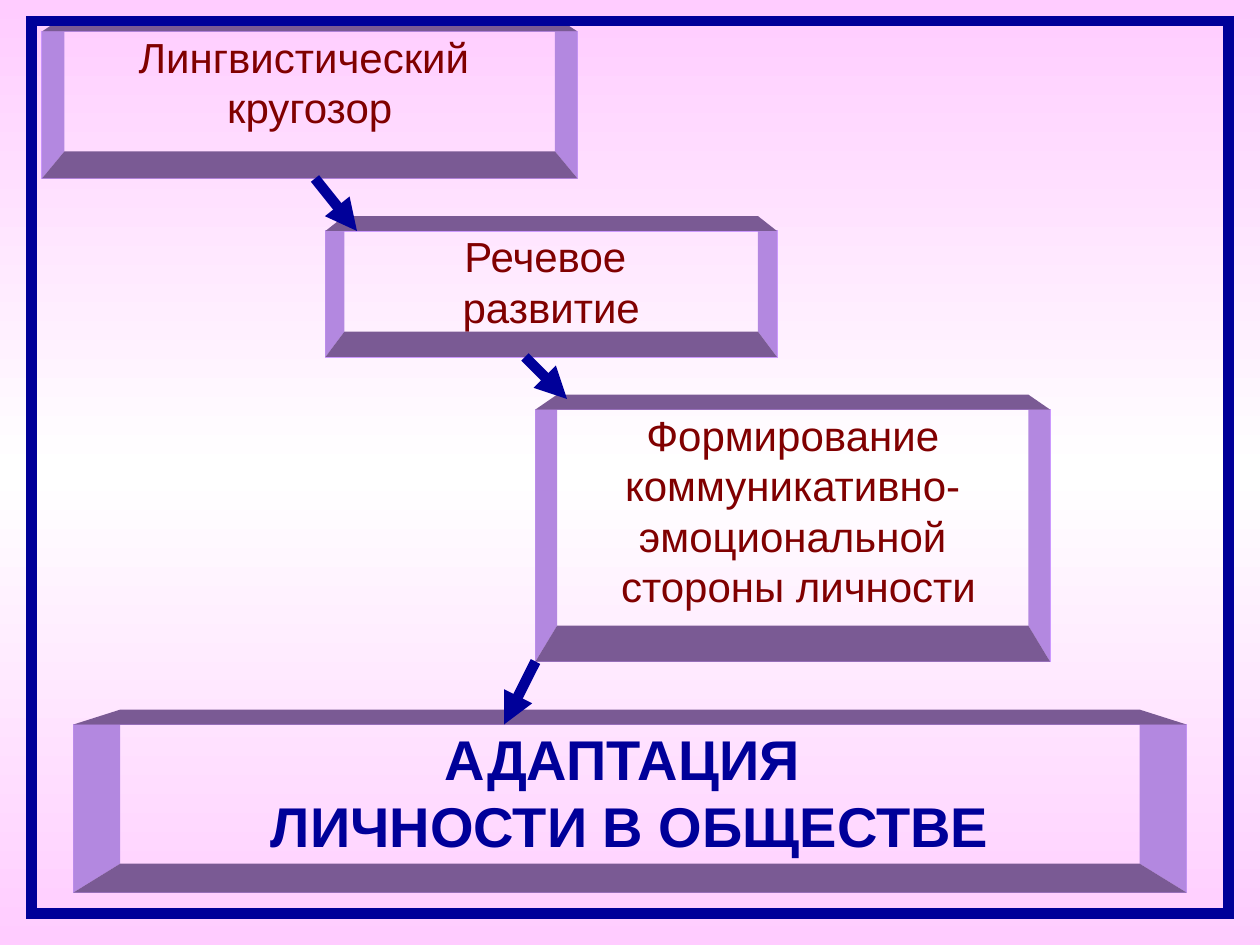
from copy import deepcopy

from lxml import etree
from pptx import Presentation
from pptx.dml.color import RGBColor
from pptx.enum.shapes import MSO_CONNECTOR, MSO_SHAPE
from pptx.enum.text import MSO_ANCHOR, PP_ALIGN
from pptx.oxml.ns import qn
from pptx.util import Pt

RECT = MSO_SHAPE.RECTANGLE
STRAIGHT = MSO_CONNECTOR.STRAIGHT
TOP = MSO_ANCHOR.TOP
CENTER = PP_ALIGN.CENTER

COLORS = {name: RGBColor.from_string(value) for name, value in {
    "pink": "FFCCFF", "white": "FFFFFF", "navy": "000099", "maroon": "800000",
    "edge": "CC99FF", "side": "B388E0", "shade": "7A5A94",
}.items()}

TEXT_FRAME = {"word_wrap": False, "vertical_anchor": TOP,
              "margin_left": Pt(7.2), "margin_right": Pt(7.2),
              "margin_top": Pt(0), "margin_bottom": Pt(3.6)}
STEP_FONT = {"name": "Arial", "size": Pt(24), "bold": False}
RESULT_FONT = {"name": "Arial", "size": Pt(32), "bold": True}

prs = Presentation()
prs.slide_width, prs.slide_height = Pt(720), Pt(540)
slide = prs.slides.add_slide(prs.slide_layouts[6])
shapes = slide.shapes

# Background: pink to white and back, top to bottom
background = slide.background.fill
background.gradient()
background.gradient_angle = 90
stop_list = next(slide.background._cSld.iter(qn("a:gsLst")))
stop_list.append(deepcopy(stop_list[-1]))
for stop, position, color in zip(background.gradient_stops, (0, 0.5, 1),
                                 ("pink", "white", "pink")):
    stop.position = position
    stop.color.rgb = COLORS[color]


def add_outline(left, top, width, height, color, weight):
    """An unfilled rectangle with sharp corners."""
    outline = shapes.add_shape(RECT, Pt(left), Pt(top), Pt(width), Pt(height))
    outline.shadow.inherit = False
    outline.fill.background()
    outline.line.color.rgb = COLORS[color]
    outline.line.width = Pt(weight)
    etree.SubElement(outline.line._get_or_add_ln(), qn("a:miter"), lim="800000")
    return outline


# Boxes from back to front; \v breaks a line
boxes = [
    (306, 234, 294, 144, "Формирование\nкоммуникативно-\nэмоциональной\n стороны личности",
     STEP_FONT, "maroon"),
    (186, 132, 258, 72, "Речевое \vразвитие", STEP_FONT, "maroon"),
    (24, 18, 306, 84, "Лингвистический \nкругозор", STEP_FONT, "maroon"),
    (42, 414, 636, 96, "АДАПТАЦИЯ \vЛИЧНОСТИ В ОБЩЕСТВЕ", RESULT_FONT, "navy"),
]
walls = {"side": [], "shade": []}
for left, top, width, height, text, font, color in boxes:
    frame = add_outline(left, top, width, height, "edge", 0.75).text_frame
    for key, value in TEXT_FRAME.items():
        setattr(frame, key, value)
    frame.text = text
    for paragraph in frame.paragraphs:
        paragraph.alignment = CENTER
        for run in paragraph.runs:
            for key, value in font.items():
                setattr(run.font, key, value)
            run.font.color.rgb = COLORS[color]

    # Walls run from the front edge to a smaller, raised back edge
    right, bottom = left + width, top + height
    inset, rise = 0.042 * width, 8.5
    back_left, back_right = left + inset, right - inset
    back_top, back_bottom = top - rise, bottom - rise - 0.083 * height
    for x, back_x in [(left, back_left), (right, back_right)]:
        walls["side"].append([(x, top), (back_x, top), (back_x, back_bottom), (x, bottom)])
    for y, back_y in [(top, back_top), (bottom, back_bottom)]:
        walls["shade"].append([(left, y), (back_left, back_y), (back_right, back_y), (right, y)])

# One outline for all walls of a colour
for color, contours in walls.items():
    builder = None
    for corners in contours:
        points = [(Pt(x), Pt(y)) for x, y in corners]
        if builder is None:
            builder = shapes.build_freeform(*points[0])
        else:
            builder.move_to(*points[0])
        builder.add_line_segments(points[1:])
    wall = builder.convert_to_shape()
    wall.shadow.inherit = False
    wall.fill.solid()
    wall.fill.fore_color.rgb = COLORS[color]
    wall.line.fill.background()

# Frame around the slide
add_outline(18, 12, 684, 510, "navy", 6)

# Arrows from each box to the next
for x1, y1, x2, y2 in [(180, 102, 204, 132), (300, 204, 324, 228), (306, 378, 288, 414)]:
    arrow = shapes.add_connector(STRAIGHT, Pt(x1), Pt(y1), Pt(x2), Pt(y2))
    arrow.line.color.rgb = COLORS["navy"]
    arrow.line.width = Pt(6)
    etree.SubElement(arrow.line._get_or_add_ln(), qn("a:tailEnd"), type="triangle")
    etree.SubElement(arrow._element.spPr, qn("a:effectLst"))

prs.save("out.pptx")
